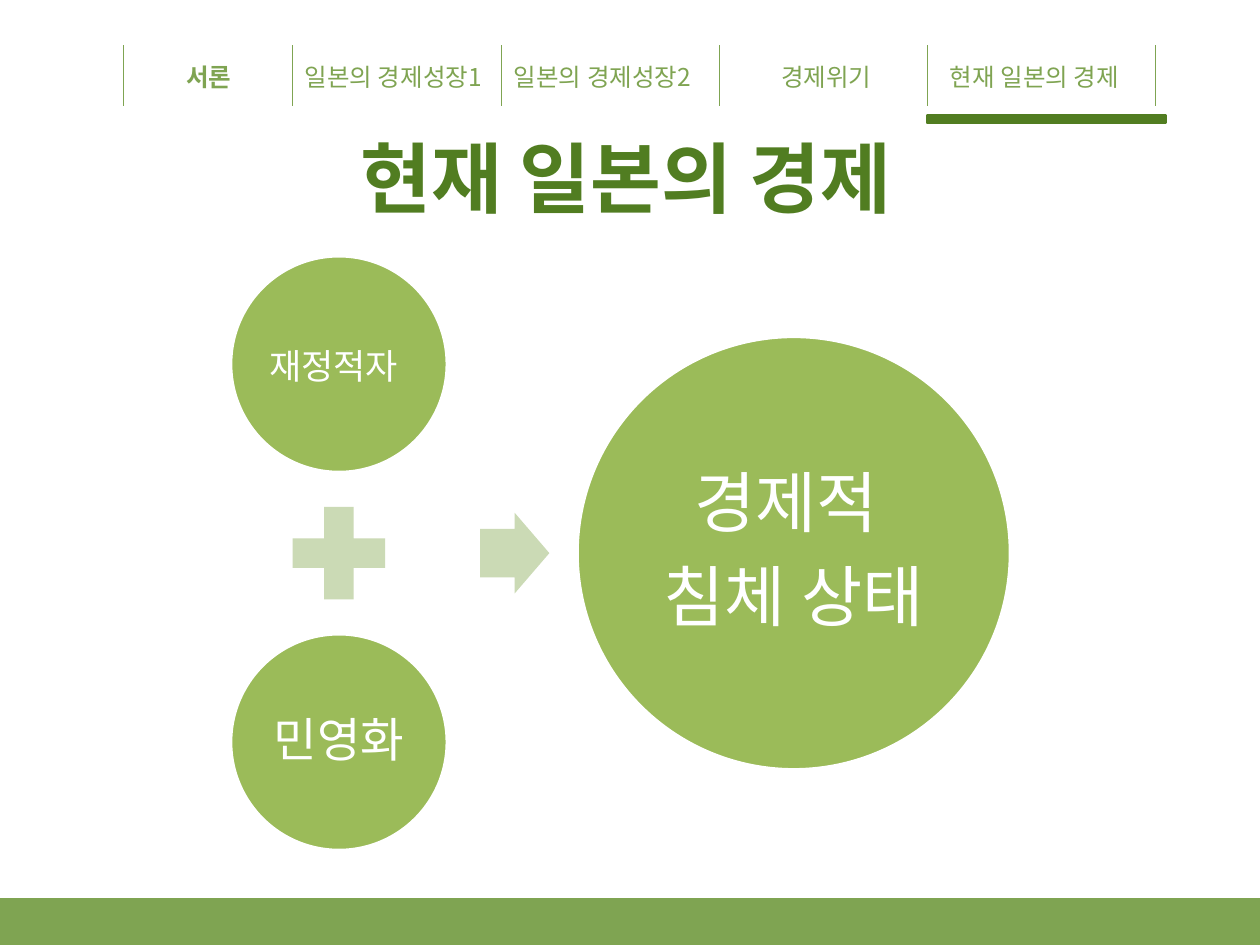
import pptx
import pptx.dml.color
import pptx.enum.shapes
import pptx.enum.text
import pptx.oxml.ns
import pptx.oxml.xmlchemy
import pptx.util
from dataclasses import dataclass

Inches = pptx.util.Inches
Pt = pptx.util.Pt
qn = pptx.oxml.ns.qn
new_element = pptx.oxml.xmlchemy.OxmlElement
SHAPE = pptx.enum.shapes.MSO_SHAPE


@dataclass(frozen=True)
class Theme:
    font: str = "Noto Sans CJK KR"
    white: str = "FFFFFF"
    nav: str = "7FA452"
    accent: str = "517D21"
    circle: str = "9BBB59"
    operator: str = "CBDAB5"
    nav_size: float = 14
    title_size: float = 44
    small_size: float = 20
    cause_size: float = 27
    result_size: float = 38


THEME = Theme()


def rgb(color):
    return pptx.dml.color.RGBColor.from_string(color)


def add_run(paragraph, text, size, color, bold=False):
    run = paragraph.add_run()
    run.text = text
    run.font.size = Pt(size)
    run.font.bold = bold
    run.font.color.rgb = rgb(color)
    run.font.name = THEME.font
    properties = run._r.get_or_add_rPr()
    east_asian = new_element("a:ea")
    east_asian.set("typeface", THEME.font)
    properties.find(qn("a:latin")).addnext(east_asian)
    return run


def outline_run(run, color, width):
    outline = new_element("a:ln")
    outline.set("w", str(int(Pt(width))))
    fill = new_element("a:solidFill")
    tone = new_element("a:srgbClr")
    tone.set("val", color)
    fill.append(tone)
    outline.append(fill)
    run._r.get_or_add_rPr().insert(0, outline)


def add_shape(slide, kind, box, fill, line=None):
    shape = slide.shapes.add_shape(kind, *map(Inches, box))
    shape.shadow.inherit = False
    shape.fill.solid()
    shape.fill.fore_color.rgb = rgb(fill)
    if line:
        shape.line.color.rgb = rgb(line)
        shape.line.width = Pt(2)
    else:
        shape.line.fill.background()
    return shape


def add_divider(slide, x):
    divider = slide.shapes.add_connector(
        pptx.enum.shapes.MSO_CONNECTOR.STRAIGHT,
        Inches(x), Inches(0.36), Inches(x), Inches(0.84))
    divider.line.color.rgb = rgb(THEME.nav)
    divider.line.width = Pt(0.75)
    divider._element.spPr.append(new_element("a:effectLst"))


def add_nav_label(slide, text, left, width, bold=False):
    label = slide.shapes.add_textbox(
        Inches(left), Inches(0.44), Inches(width), Inches(0.34))
    label.text_frame.word_wrap = False
    label.text_frame.auto_size = pptx.enum.text.MSO_AUTO_SIZE.SHAPE_TO_FIT_TEXT
    add_run(label.text_frame.paragraphs[0], text, THEME.nav_size, THEME.nav, bold)


def add_title(slide, text):
    title = slide.shapes.title
    title.left, title.top, title.width, title.height = map(
        Inches, (0.47, 0.78, 9, 1.25))
    title.text_frame.vertical_anchor = pptx.enum.text.MSO_ANCHOR.MIDDLE
    paragraph = title.text_frame.paragraphs[0]
    paragraph.alignment = pptx.enum.text.PP_ALIGN.CENTER
    run = add_run(paragraph, text, THEME.title_size, THEME.accent, True)
    outline_run(run, THEME.white, 1.4)


def add_circle(slide, left, top, diameter, lines, inset):
    circle = add_shape(slide, SHAPE.OVAL, (left, top, diameter, diameter),
                       THEME.circle, THEME.white)
    frame = circle.text_frame
    frame.word_wrap = True
    frame.vertical_anchor = pptx.enum.text.MSO_ANCHOR.MIDDLE
    frame.margin_left = frame.margin_right = Inches(inset)
    frame.margin_top = frame.margin_bottom = Inches(inset)
    for index, runs in enumerate(lines):
        paragraph = frame.add_paragraph() if index else frame.paragraphs[0]
        paragraph.alignment = pptx.enum.text.PP_ALIGN.CENTER
        paragraph.line_spacing = 0.9
        paragraph.space_after = Pt(round(0.35 * max(size for _, size in runs)))
        for text, size in runs:
            add_run(paragraph, text, size, THEME.white)


def add_navigation(slide):
    for x in (0.98, 2.32, 3.98, 5.71, 7.36, 9.17):
        add_divider(slide, x)
    add_nav_label(slide, "서론", 1.38, 0.59, bold=True)
    for text, left, width in (
        ("일본의 경제성장1", 2.32, 1.76),
        ("일본의 경제성장2", 3.98, 1.76),
        ("경제위기", 6.1, 0.99),
        ("현재 일본의 경제", 7.44, 1.71),
    ):
        add_nav_label(slide, text, left, width)
    add_shape(slide, SHAPE.RECTANGLE, (7.36, 0.92, 1.89, 0.05),
              THEME.accent, THEME.accent)


def add_equation(slide):
    add_circle(slide, 1.83, 2.03, 1.72,
               [[("재정적자", THEME.small_size), (" ", THEME.cause_size)]], 0.03)
    add_shape(slide, SHAPE.MATH_PLUS, (2.19, 3.89, 1, 1), THEME.operator)
    add_circle(slide, 1.83, 5.03, 1.72, [[("민영화", THEME.cause_size)]], 0.04)
    arrow = add_shape(slide, SHAPE.RIGHT_ARROW, (3.81, 4.07, 0.55, 0.64),
                      THEME.operator)
    arrow.adjustments[0] = 0.6
    arrow.adjustments[1] = 0.5
    add_circle(slide, 4.58, 2.67, 3.44,
               [[("경제적 ", THEME.result_size)],
                [("침체 상태", THEME.result_size)]], 0.05)


def main():
    deck = pptx.Presentation()
    deck.slide_width, deck.slide_height = Inches(10), Inches(7.5)
    slide = deck.slides.add_slide(deck.slide_layouts[5])
    add_shape(slide, SHAPE.RECTANGLE, (0, 7.14, 10, 0.36), THEME.nav, THEME.nav)
    add_navigation(slide)
    add_title(slide, "현재 일본의 경제")
    add_equation(slide)
    deck.save("out.pptx")


if __name__ == "__main__":
    main()
